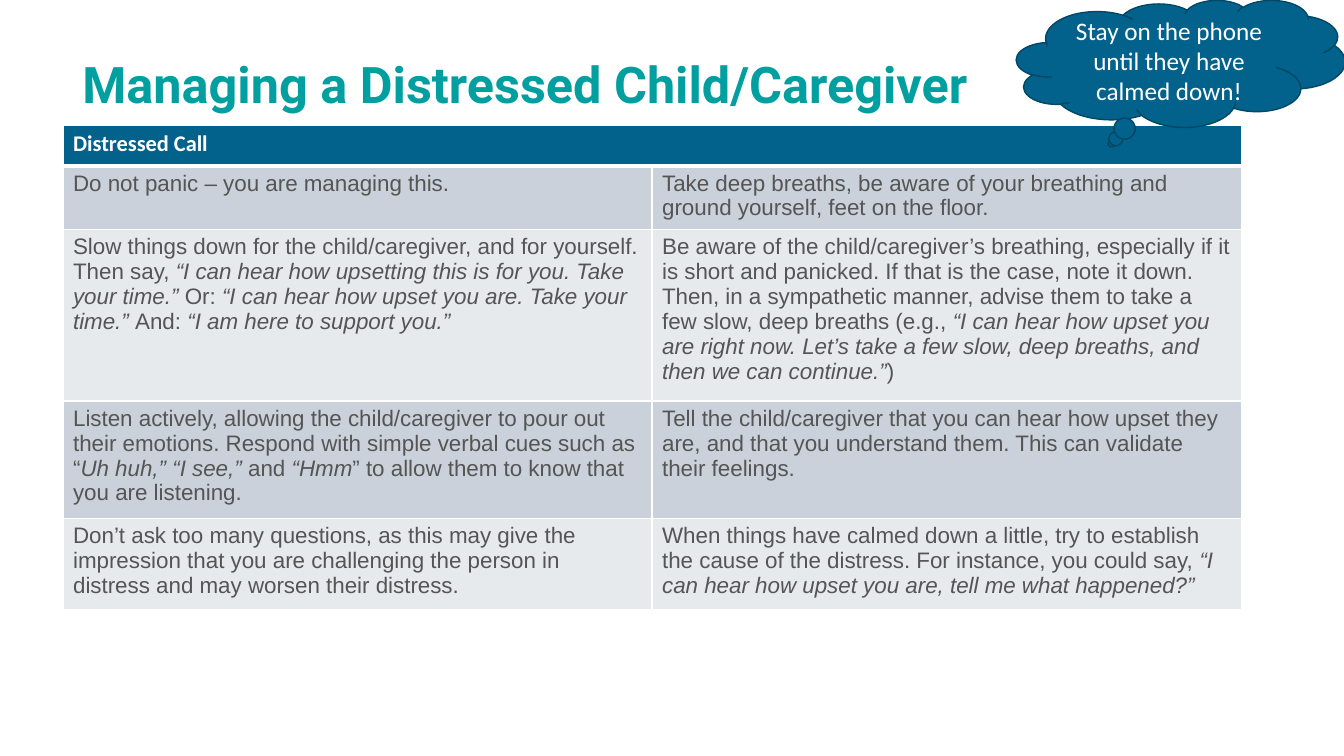
from pptx import Presentation
from pptx.dml.color import RGBColor
from pptx.enum.shapes import MSO_SHAPE as Shape
from pptx.enum.text import MSO_ANCHOR as Anchor, PP_ALIGN as Align
from pptx.oxml import parse_xml
from pptx.oxml.ns import nsdecls
from pptx.util import Pt

PX = 9525
WHITE = RGBColor(0xFF, 0xFF, 0xFF)
TEAL = RGBColor(0x02, 0x9F, 0xA0)
BLUE = RGBColor(0x02, 0x62, 0x8C)
NAVY = RGBColor(0x01, 0x47, 0x66)
GREY = RGBColor(0x54, 0x55, 0x54)
BANDS = RGBColor(0xCA, 0xD1, 0xDA), RGBColor(0xE6, 0xEA, 0xED)

HEADING = "Distressed Call"
ADVICE = [
    ("Do not panic – you are managing this.",
     "Take deep breaths, be aware of your breathing and ground yourself, "
     "feet on the floor."),
    ("Slow things down for the child/caregiver, and for yourself. Then say, "
     "*“I can hear how upsetting this is for you. Take your time.” *Or: "
     "*“I can hear how upset you are. Take your time.” *And: "
     "*“I am here to support you.”*",
     "Be aware of the child/caregiver’s breathing, especially if it is short "
     "and panicked. If that is the case, note it down. Then, in a sympathetic "
     "manner, advise them to take a few slow, deep breaths (e.g., *“I can hear "
     "how upset you are right now. Let’s take a few slow, deep breaths, and "
     "then we can continue.”*)"),
    ("Listen actively, allowing the child/caregiver to pour out their "
     "emotions. Respond with simple verbal cues such as “*Uh huh,” “I see,” "
     "*and *“Hmm*” to allow them to know that you are listening.",
     "Tell the child/caregiver that you can hear how upset they are, and that "
     "you understand them. This can validate their feelings."),
    ("Don’t ask too many questions, as this may give the impression that you "
     "are challenging the person in distress and may worsen their distress.",
     "When things have calmed down a little, try to establish the cause of "
     "the distress. For instance, you could say, *“I can hear how upset you "
     "are, tell me what happened?”*"),
]
ROW_HEIGHTS = 39, 55, 152, 104, 81


def write(tf, text, font="Arial", size=16, color=GREY, bold=False,
          align=Align.LEFT, spacing=None):
    """Fill a text frame with one paragraph, setting *marked* parts in italics."""
    tf.word_wrap = True
    p = tf.paragraphs[0]
    p.alignment = align
    p.line_spacing = spacing
    for i, part in enumerate(text.split("*")):
        if part:
            r = p.add_run()
            r.text = part
            r.font.name, r.font.size = font, Pt(size)
            r.font.bold, r.font.italic = bold, i % 2 == 1
            r.font.color.rgb = color


class Deck:
    """Hold the presentation and its current slide, with a method per element."""

    def __init__(self, width, height):
        """Start a presentation with one blank slide."""
        self.prs = Presentation()
        self.prs.slide_width, self.prs.slide_height = width * PX, height * PX
        self.s = self.prs.slides.add_slide(self.prs.slide_layouts[6])

    def title(self, text, *box):
        """Add the slide title."""
        sp = self.s.shapes.add_textbox(*(v * PX for v in box))
        sp.text_frame.vertical_anchor = Anchor.MIDDLE
        write(sp.text_frame, text, font="Roboto", size=36, color=TEAL,
              bold=True, spacing=0.9)

    def cell(self, cell, fill, top=1, bottom=1):
        """Fill a cell and draw its white borders."""
        widths = {"lnL": 1, "lnR": 1, "lnT": top, "lnB": bottom}
        cell.fill.solid()
        cell.fill.fore_color.rgb = fill
        tcPr = cell._tc.get_or_add_tcPr()
        for i, (side, width) in enumerate(widths.items()):
            tcPr.insert(i, parse_xml(
                f'<a:{side} {nsdecls("a")} w="{Pt(width)}"><a:solidFill>'
                f'<a:srgbClr val="{WHITE}"/></a:solidFill></a:{side}>'))

    def table(self, heading, rows, heights, left, top, col_width):
        """Add a two-column table under one merged heading."""
        frame = self.s.shapes.add_table(
            len(heights), 2, left * PX, top * PX,
            2 * col_width * PX, sum(heights) * PX)
        table = frame.table
        for col in table.columns:
            col.width = col_width * PX
        for row, height in zip(table.rows, heights):
            row.height = height * PX
        for cell in table.rows[0].cells:
            self.cell(cell, BLUE, bottom=3)
        table.cell(0, 0).merge(table.cell(0, 1))
        write(table.cell(0, 0).text_frame, heading, font="Calibri",
              color=WHITE, bold=True)
        for i, texts in enumerate(rows):
            for j, text in enumerate(texts):
                cell = table.cell(i + 1, j)
                self.cell(cell, BANDS[i % 2], top=1 if i else 3)
                write(cell.text_frame, text)

    def cloud(self, text, *box):
        """Add a cloud callout with its tail at the lower left."""
        sp = self.s.shapes.add_shape(Shape.CLOUD_CALLOUT, *(v * PX for v in box))
        sp.adjustments[0], sp.adjustments[1] = -0.21, 0.63
        sp.shadow.inherit = False
        sp.fill.solid()
        sp.fill.fore_color.rgb = BLUE
        sp.line.color.rgb = NAVY
        sp.line.width = Pt(1)
        sp.text_frame.vertical_anchor = Anchor.MIDDLE
        write(sp.text_frame, text, font="Calibri", size=18, color=WHITE,
              align=Align.CENTER)


def main():
    """Build and save the slide."""
    deck = Deck(1280, 720)
    deck.title("Managing a Distressed Child/Caregiver", 69, 14, 1104, 139)
    deck.table(HEADING, ADVICE, ROW_HEIGHTS, 60, 119, 561)
    deck.cloud("Stay on the phone until they have calmed down!", 968, 0, 313, 121)
    deck.prs.save("out.pptx")


if __name__ == "__main__":
    main()
